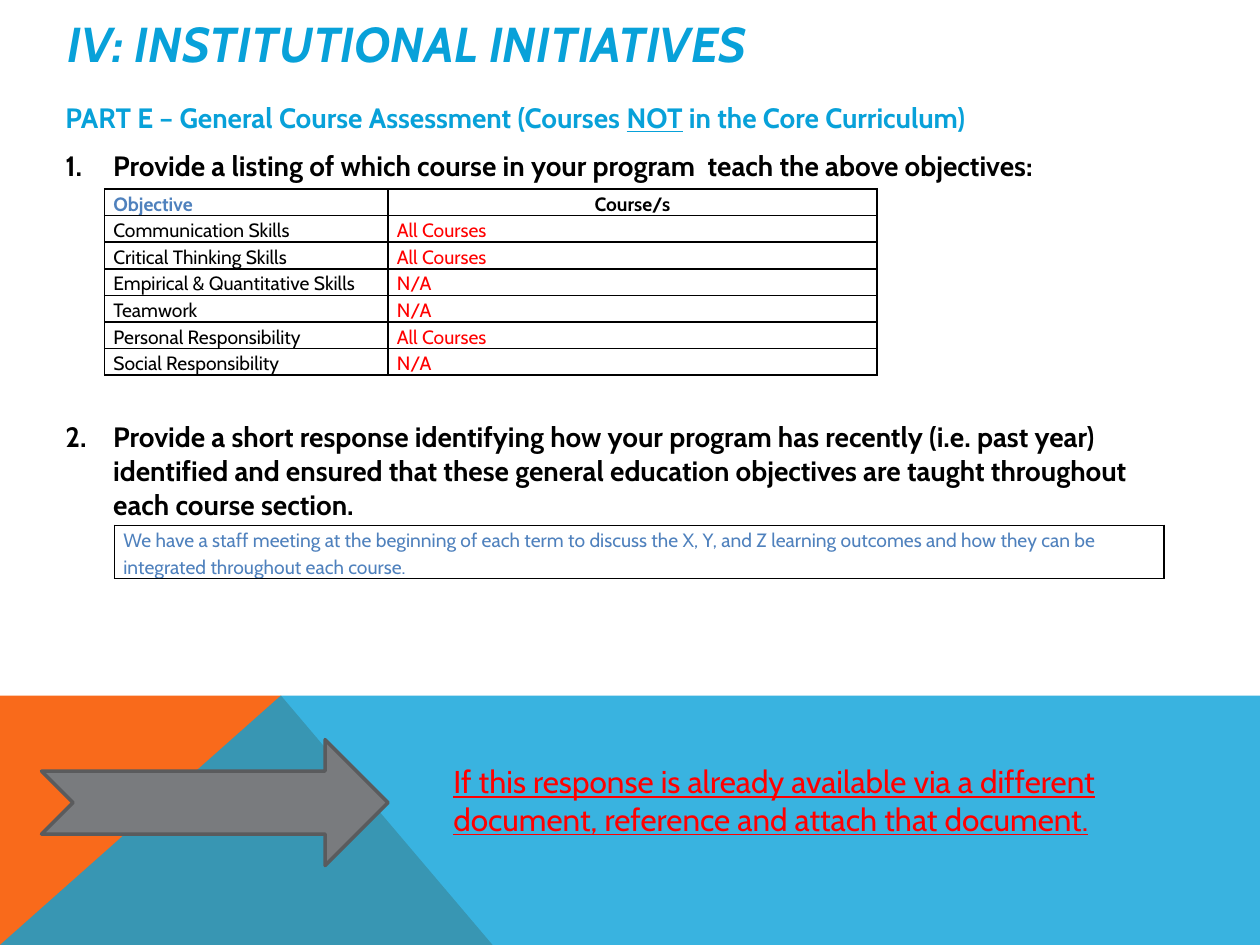
"""Build the Institutional Initiatives slide on general course assessment."""
from dataclasses import dataclass

from lxml import etree
from pptx import Presentation
from pptx.dml.color import RGBColor
from pptx.enum.shapes import MSO_SHAPE
from pptx.enum.text import MSO_ANCHOR, PP_ALIGN
from pptx.oxml.ns import qn
from pptx.util import Inches, Pt

ARROW = MSO_SHAPE.NOTCHED_RIGHT_ARROW
MIDDLE, TOP = MSO_ANCHOR.MIDDLE, MSO_ANCHOR.TOP
LEFT, CENTER = PP_ALIGN.LEFT, PP_ALIGN.CENTER


@dataclass(frozen=True)
class Theme:
    font: str = "Cabin"
    blue: str = "08A1D9"
    orange: str = "F96A1B"
    gray: str = "797B7E"
    dark_gray: str = "5A5B5D"
    steel: str = "4F81BD"
    red: str = "FF0000"
    black: str = "000000"
    title: int = 28
    note: int = 18
    body: int = 16
    table: int = 11


T = Theme()


def add_run(p, text, size=T.body, color=T.black, bold=False, italic=False, underline=False):
    r = p.add_run()
    r.text = text
    r.font.name = T.font
    r.font.size = Pt(size)
    r.font.color.rgb = RGBColor.from_string(color)
    r.font.bold, r.font.italic, r.font.underline = bold, italic, underline


def add_grid(x, y, widths, row_height, rows):
    table = s.shapes.add_table(len(rows), len(widths), Inches(x), Inches(y),
                               Inches(sum(widths)), Inches(row_height * len(rows))).table
    table.first_row = table.horz_banding = False
    for column, width in zip(table.columns, widths):
        column.width = Inches(width)
    for i, row in enumerate(rows):
        table.rows[i].height = Inches(row_height)
        for j, (text, color, bold, align, anchor) in enumerate(row):
            cell = table.cell(i, j)
            cell.margin_left = cell.margin_right = Inches(0.07)
            cell.margin_top = cell.margin_bottom = 0
            cell.vertical_anchor = anchor
            p = cell.text_frame.paragraphs[0]
            p.alignment, p.line_spacing = align, 1.15
            add_run(p, text, size=T.table, color=color, bold=bold)
            tcPr = cell._tc.get_or_add_tcPr()
            for side in ("a:lnL", "a:lnR", "a:lnT", "a:lnB"):
                ln = etree.SubElement(tcPr, qn(side), w=str(Pt(1)))
                fill = etree.SubElement(ln, qn("a:solidFill"))
                etree.SubElement(fill, qn("a:srgbClr"), val=T.black)
            cell.fill.background()


prs = Presentation()
prs.slide_width, prs.slide_height = Inches(10), Inches(7.5)
s = prs.slides.add_slide(prs.slide_layouts[6])

bands = [
    (T.orange, 100, [(0, 7.5), (0, 5.52), (2.23, 5.52), (3.91, 7.5)]),
    (T.blue, 80, [(0, 7.5), (2.23, 5.52), (10, 5.52), (10, 7.5)]),
]
for color, opacity, points in bands:
    corners = [(Inches(x), Inches(y)) for x, y in points]
    builder = s.shapes.build_freeform(*corners[0])
    builder.add_line_segments(corners[1:], close=True)
    sp = builder.convert_to_shape()
    sp.shadow.inherit = False
    sp.fill.solid()
    sp.fill.fore_color.rgb = RGBColor.from_string(color)
    sp.line.fill.background()
    if opacity < 100:
        clr = sp._element.spPr.find(".//" + qn("a:srgbClr"))
        etree.SubElement(clr, qn("a:alpha"), val=str(opacity * 1000))

frames = []
for x, y, w, h, anchor in [(0.44, 0.04, 8.71, 0.6, MIDDLE),
                           (0.42, 0.75, 9.08, 4.75, TOP),
                           (3.5, 6, 5.75, 0.71, TOP)]:
    tf = s.shapes.add_textbox(Inches(x), Inches(y), Inches(w), Inches(h)).text_frame
    tf.word_wrap, tf.vertical_anchor = True, anchor
    frames.append(tf)
title, body, note = frames

add_run(title.paragraphs[0], "IV: INSTITUTIONAL INITIATIVES",
        size=T.title, color=T.blue, bold=True, italic=True)
add_run(note.paragraphs[0],
        "If this response is already available via a different document, "
        "reference and attach that document.",
        size=T.note, color=T.red, underline=True)

p = body.paragraphs[0]
for text, underline in [("PART E – General Course Assessment (Courses ", False),
                        ("NOT", True),
                        (" in the Core Curriculum)", False)]:
    add_run(p, text, color=T.blue, bold=True, underline=underline)

questions = [
    (8, "Provide a listing of which course in your program  teach the above objectives:"),
    (136, "Provide a short response identifying how your program has recently (i.e. past year) "
          "identified and ensured that these general education objectives are taught throughout "
          "each course section."),
]
for number, (gap, text) in enumerate(questions, 1):
    p = body.add_paragraph()
    p.space_before = Pt(gap)
    add_run(p, text, bold=True)
    pPr = p._p.get_or_add_pPr()
    pPr.set("marL", str(Inches(0.38)))
    pPr.set("indent", str(Inches(-0.38)))
    etree.SubElement(pPr, qn("a:buFont"), typeface=T.font)
    etree.SubElement(pPr, qn("a:buAutoNum"), type="arabicPeriod", startAt=str(number))

arrow = s.shapes.add_shape(ARROW, Inches(0.33), Inches(5.87), Inches(2.75), Inches(1))
arrow.shadow.inherit = False
arrow.fill.solid()
arrow.fill.fore_color.rgb = RGBColor.from_string(T.gray)
arrow.line.color.rgb = RGBColor.from_string(T.dark_gray)
arrow.line.width = Pt(2)

objectives = [
    ("Communication Skills", "All Courses"),
    ("Critical Thinking Skills", "All Courses"),
    ("Empirical & Quantitative Skills", "N/A"),
    ("Teamwork", "N/A"),
    ("Personal Responsibility", "All Courses"),
    ("Social Responsibility", "N/A"),
]
rows = [[("Objective", T.steel, True, LEFT, MIDDLE), ("Course/s", T.black, True, CENTER, MIDDLE)]]
for objective, courses in objectives:
    rows.append([(objective, T.black, False, LEFT, TOP), (courses, T.red, False, LEFT, TOP)])
add_grid(0.83, 1.5, [2.25, 3.88], 0.21, rows)

response = ("We have a staff meeting at the beginning of each term to discuss the X, Y, and Z "
            "learning outcomes and how they can be integrated throughout each course.")
add_grid(0.91, 4.17, [8.33], 0.41, [[(response, T.steel, False, LEFT, TOP)]])

prs.save("out.pptx")
